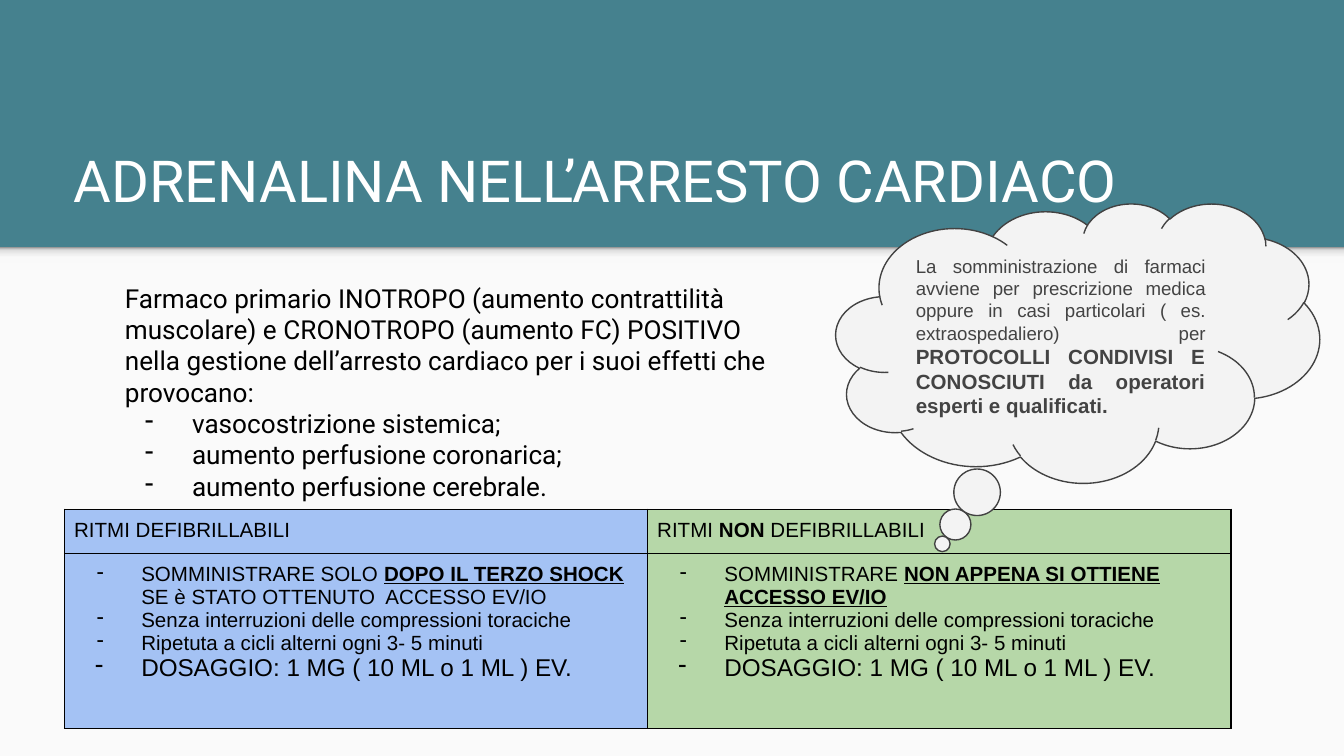
from copy import deepcopy

from lxml import etree
from pptx import Presentation
from pptx.dml.color import RGBColor
from pptx.enum.shapes import MSO_SHAPE
from pptx.enum.text import MSO_ANCHOR, PP_ALIGN
from pptx.oxml.ns import qn
from pptx.util import Cm, Pt

RECTANGLE = MSO_SHAPE.RECTANGLE
CLOUD = MSO_SHAPE.CLOUD_CALLOUT
TOP, MIDDLE, BOTTOM = MSO_ANCHOR.TOP, MSO_ANCHOR.MIDDLE, MSO_ANCHOR.BOTTOM
JUSTIFY = PP_ALIGN.JUSTIFY

TEAL = RGBColor(0x45, 0x81, 0x8E)
PAPER = RGBColor(0xFA, 0xFA, 0xFA)
WHITE = RGBColor(0xFF, 0xFF, 0xFF)
BLACK = RGBColor(0x00, 0x00, 0x00)
BLUE = RGBColor(0xA4, 0xC2, 0xF4)
GREEN = RGBColor(0xB6, 0xD7, 0xA8)
CLOUD_FILL = RGBColor(0xF3, 0xF3, 0xF3)
CLOUD_LINE = RGBColor(0x42, 0x42, 0x42)
CLOUD_TEXT = RGBColor(0x43, 0x43, 0x43)
SHADE_LIGHT = RGBColor(0xF9, 0xF9, 0xF9)
SHADE_MIDDLE = RGBColor(0xDE, 0xDE, 0xDE)
SHADE_DARK = RGBColor(0x99, 0x99, 0x99)
SHADE_STOPS = [(0, SHADE_LIGHT), (0.36, SHADE_LIGHT), (0.8, SHADE_MIDDLE), (1, SHADE_DARK)]

INTRODUCTION = (
    "Farmaco primario INOTROPO (aumento contrattilità muscolare) e CRONOTROPO "
    "(aumento FC) POSITIVO nella gestione dell’arresto cardiaco per i suoi effetti "
    "che provocano:"
)
EFFECTS = [
    "vasocostrizione sistemica;",
    "aumento perfusione coronarica;",
    "aumento perfusione cerebrale.",
]
COLUMNS = [
    (
        BLUE,
        [("RITMI DEFIBRILLABILI", False)],
        [
            ("SOMMINISTRARE SOLO ", False),
            ("DOPO IL TERZO SHOCK", True),
            (" SE è STATO OTTENUTO  ACCESSO EV/IO", False),
        ],
    ),
    (
        GREEN,
        [("RITMI ", False), ("NON", True), (" DEFIBRILLABILI", False)],
        [("SOMMINISTRARE ", False), ("NON APPENA SI OTTIENE ACCESSO EV/IO", True)],
    ),
]
COMMON_RULES = [
    "Senza interruzioni delle compressioni toraciche",
    "Ripetuta a cicli alterni ogni 3- 5 minuti",
]
DOSAGE = "DOSAGGIO: 1 MG ( 10 ML o 1 ML ) EV."
CLOUD_NOTE = (
    "La somministrazione di farmaci avviene per prescrizione medica oppure in casi "
    "particolari ( es. extraospedaliero) per "
)
CLOUD_EMPHASIS = "PROTOCOLLI CONDIVISI E CONOSCIUTI da operatori esperti e qualificati."


def add_run(paragraph, text, size, font_name, color=BLACK, bold=False, underline=False):
    run = paragraph.add_run()
    run.text = text
    font = run.font
    font.size, font.name = Pt(size), font_name
    font.bold, font.underline = bold, underline
    font.color.rgb = color


def add_dash(paragraph, hanging):
    properties = paragraph._p.get_or_add_pPr()
    properties.set("marL", str(Cm(1.27)))
    properties.set("indent", str(-hanging))
    color = etree.SubElement(properties, qn("a:buClr"))
    etree.SubElement(color, qn("a:srgbClr"), val=str(BLACK))
    etree.SubElement(properties, qn("a:buChar"), char="-")


def set_frame(text_frame, anchor):
    text_frame.word_wrap = True
    text_frame.vertical_anchor = anchor
    text_frame.margin_left = text_frame.margin_right = Cm(0.25)
    text_frame.margin_top = text_frame.margin_bottom = Cm(0.25)


def add_text_box(slide, left, top, width, height, anchor):
    text_box = slide.shapes.add_textbox(Cm(left), Cm(top), Cm(width), Cm(height))
    set_frame(text_box.text_frame, anchor)
    return text_box.text_frame


def add_plain_shape(slide, kind, left, top, width, height, color):
    shape = slide.shapes.add_shape(kind, Cm(left), Cm(top), Cm(width), Cm(height))
    shape.shadow.inherit = False
    shape.fill.solid()
    shape.fill.fore_color.rgb = color
    shape.line.fill.background()
    return shape


def add_backdrop(slide):
    slide.background.fill.solid()
    slide.background.fill.fore_color.rgb = TEAL
    add_plain_shape(slide, RECTANGLE, 0, 4.67, 25.4, 9.62, PAPER)
    shade = add_plain_shape(slide, RECTANGLE, 0, 4.67, 25.4, 0.3, SHADE_LIGHT)
    shade.fill.gradient()
    shade.fill.gradient_angle = 90
    stop_list = next(shade._element.iter(qn("a:gsLst")))
    for stop in list(stop_list):
        stop_list.append(deepcopy(stop))
    for stop, (position, color) in zip(shade.fill.gradient_stops, SHADE_STOPS):
        stop.position = position
        stop.color.rgb = color


def add_introduction(slide):
    text_frame = add_text_box(slide, 2.11, 5.08, 12.98, 4.7, TOP)
    add_run(text_frame.paragraphs[0], INTRODUCTION, 14, "Roboto")
    for effect in EFFECTS:
        paragraph = text_frame.add_paragraph()
        add_dash(paragraph, Cm(0.89))
        add_run(paragraph, effect, 14, "Roboto")


def style_cell(cell, color):
    cell.margin_left = cell.margin_right = Cm(0.18)
    cell.margin_top = cell.margin_bottom = Cm(0.18)
    properties = cell._tc.get_or_add_tcPr()
    for side in ("lnL", "lnR", "lnT", "lnB"):
        border = etree.SubElement(properties, qn(f"a:{side}"), w=str(Pt(1)))
        fill = etree.SubElement(border, qn("a:solidFill"))
        etree.SubElement(fill, qn("a:srgbClr"), val=str(BLACK))
    cell.fill.solid()
    cell.fill.fore_color.rgb = color


def fill_rules(text_frame, first_rule):
    rules = [(first_rule, 11, 0.84)]
    rules += [([(rule, False)], 11, 0.84) for rule in COMMON_RULES]
    rules.append(([(DOSAGE, False)], 13, 0.87))
    for index, (parts, size, hanging) in enumerate(rules):
        paragraph = text_frame.add_paragraph() if index else text_frame.paragraphs[0]
        add_dash(paragraph, Cm(hanging))
        for text, strong in parts:
            add_run(paragraph, text, size, "Arial", bold=strong, underline=strong)


def add_rhythm_table(slide):
    frame = slide.shapes.add_table(2, 2, Cm(1.22), Cm(9.63), Cm(22.04), Cm(4.14))
    table = frame.table
    table.first_row = table.horz_banding = False
    table.rows[0].height, table.rows[1].height = Cm(0.83), Cm(3.31)
    for index, (color, heading, first_rule) in enumerate(COLUMNS):
        heading_cell, rules_cell = table.cell(0, index), table.cell(1, index)
        style_cell(heading_cell, color)
        style_cell(rules_cell, color)
        for text, strong in heading:
            add_run(heading_cell.text_frame.paragraphs[0], text, 11, "Arial", bold=strong)
        fill_rules(rules_cell.text_frame, first_rule)


def add_cloud(slide):
    cloud = add_plain_shape(slide, CLOUD, 15.8, 3.84, 9.14, 5.28, CLOUD_FILL)
    cloud.adjustments[0], cloud.adjustments[1] = -0.28, 0.72
    cloud.line.color.rgb = CLOUD_LINE
    cloud.line.width = Pt(0.75)
    set_frame(cloud.text_frame, MIDDLE)
    paragraph = cloud.text_frame.paragraphs[0]
    paragraph.alignment = JUSTIFY
    add_run(paragraph, CLOUD_NOTE, 10, "Arial", CLOUD_TEXT)
    add_run(paragraph, CLOUD_EMPHASIS, 11, "Arial", CLOUD_TEXT, bold=True)


def main():
    presentation = Presentation()
    presentation.slide_width, presentation.slide_height = Cm(25.4), Cm(14.29)
    slide = presentation.slides.add_slide(presentation.slide_layouts[6])
    add_backdrop(slide)
    title = add_text_box(slide, 1.14, 2.16, 22.83, 2.13, BOTTOM)
    add_run(title.paragraphs[0], "ADRENALINA NELL’ARRESTO CARDIACO", 31, "Roboto", WHITE)
    add_introduction(slide)
    add_rhythm_table(slide)
    add_cloud(slide)
    presentation.save("out.pptx")


if __name__ == "__main__":
    main()
